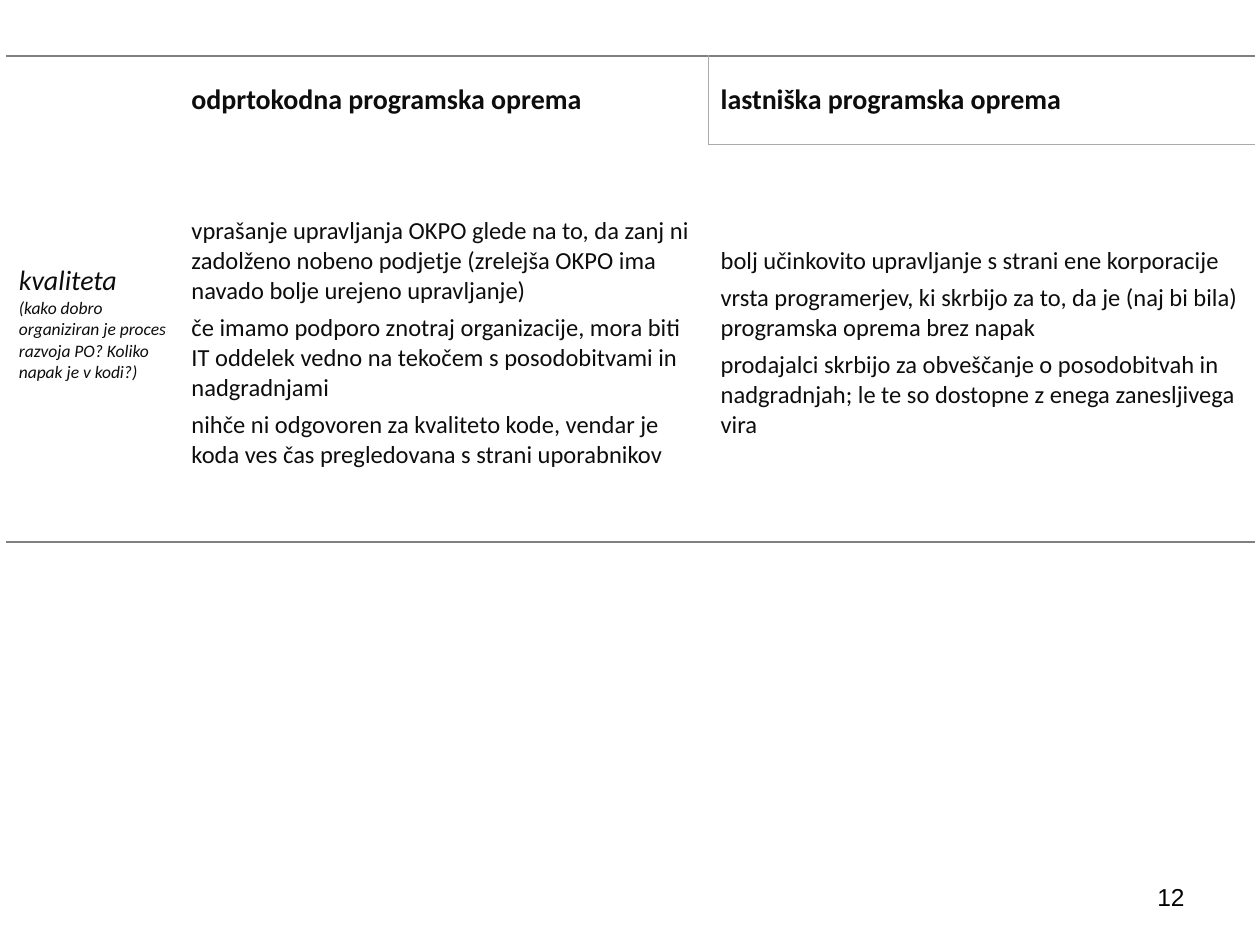
from lxml import etree
from pptx import Presentation
from pptx.dml.color import RGBColor
from pptx.enum.text import MSO_ANCHOR, PP_ALIGN
from pptx.oxml.ns import qn
from pptx.util import Inches, Pt

MIDDLE = MSO_ANCHOR.MIDDLE
RIGHT = PP_ALIGN.RIGHT
BLANK_LAYOUT = 6

COLORS = {"ink": "0D0D0D", "black": "000000", "rule": "808080", "hairline": "AAAAAA"}
RULE = ("rule", 1)
HAIRLINE = ("hairline", 0.25)

# Text formats: font values, colour name and space before
HEADING = {"font": {"name": "Calibri", "size": Pt(16), "bold": True}, "color": "ink", "before": 3.2}
TOPIC = {"font": {"name": "Calibri", "size": Pt(16), "italic": True}, "color": "ink", "before": 0}
DETAIL = {"font": {"name": "Calibri", "size": Pt(10), "italic": True}, "color": "ink", "before": 0}
POINT = {"font": {"name": "Calibri", "size": Pt(14)}, "color": "ink", "before": 4.2}
NUMBER = {"font": {"name": "Arial", "size": Pt(14)}, "color": "black", "before": 0}

OPEN_POINTS = [
    "vprašanje upravljanja OKPO glede na to, da zanj ni zadolženo nobeno podjetje "
    "(zrelejša OKPO ima navado bolje urejeno upravljanje)",
    "če imamo podporo znotraj organizacije, mora biti IT oddelek vedno na tekočem "
    "s posodobitvami in nadgradnjami",
    "nihče ni odgovoren za kvaliteto kode, vendar je koda ves čas pregledovana "
    "s strani uporabnikov",
]
OWNED_POINTS = [
    "bolj učinkovito upravljanje s strani ene korporacije",
    "vrsta programerjev, ki skrbijo za to, da je (naj bi bila) programska oprema brez napak",
    "prodajalci skrbijo za obveščanje o posodobitvah in nadgradnjah; "
    "le te so dostopne z enega zanesljivega vira",
]


class SlideBuilder:
    """Holds the deck, the current page and the shared styling."""

    def __init__(self, width, height):
        self.deck = Presentation()
        self.deck.slide_width = Inches(width)
        self.deck.slide_height = Inches(height)
        self.page = self.deck.slides.add_slide(self.deck.slide_layouts[BLANK_LAYOUT])

    def place(self, left, top, width, height):
        """Turn shares of the slide's size into lengths."""
        across, down = self.deck.slide_width, self.deck.slide_height
        return [int(share * size) for share, size in
                zip((left, top, width, height), (across, down, across, down))]

    def fill_text(self, frame, lines, align=None):
        for index, (text, style) in enumerate(lines):
            para = frame.paragraphs[0] if index == 0 else frame.add_paragraph()
            para.alignment = align
            para.space_before = Pt(style["before"])
            span = para.add_run()
            span.text = text
            for name, value in style["font"].items():
                setattr(span.font, name, value)
            span.font.color.rgb = RGBColor.from_string(COLORS[style["color"]])

    def border(self, cell, edges):
        """Draw the given edges (L, R, T, B) and clear the others."""
        properties = cell._tc.get_or_add_tcPr()
        for side in "LRTB":
            line = etree.SubElement(properties, qn(f"a:ln{side}"))
            if side in edges:
                color, weight = edges[side]
                line.set("w", str(Pt(weight)))
                fill = etree.SubElement(line, qn("a:solidFill"))
                etree.SubElement(fill, qn("a:srgbClr"), val=COLORS[color])
            else:
                etree.SubElement(line, qn("a:noFill"))

    def table(self, area, columns, rows, cells):
        table = self.page.shapes.add_table(len(rows), len(columns), *self.place(*area)).table
        table.first_row = table.horz_banding = False
        for column, width in zip(table.columns, columns):
            column.width = Inches(width)
        for row, height in zip(table.rows, rows):
            row.height = Inches(height)
        for row_index, row in enumerate(cells):
            for column_index, (lines, edges) in enumerate(row):
                cell = table.cell(row_index, column_index)
                cell.vertical_anchor = MIDDLE
                self.border(cell, edges)
                cell.fill.background()
                self.fill_text(cell.text_frame, lines)
        return table

    def text(self, area, lines, align):
        box = self.page.shapes.add_textbox(*self.place(*area))
        box.text_frame.word_wrap = True
        self.fill_text(box.text_frame, lines, align)


def main():
    builder = SlideBuilder(10, 7.5)

    # Comparison of open and proprietary software
    topic = [
        ("kvaliteta", TOPIC),
        ("(kako dobro organiziran je proces razvoja PO? Koliko napak je v kodi?)", DETAIL),
    ]
    cells = [
        [
            ([], {"T": RULE}),
            ([("odprtokodna programska oprema", HEADING)], {"T": RULE, "R": HAIRLINE}),
            ([("lastniška programska oprema", HEADING)],
             {"L": HAIRLINE, "T": RULE, "B": HAIRLINE}),
        ],
        [
            (topic, {"B": RULE}),
            ([(point, POINT) for point in OPEN_POINTS], {"B": RULE}),
            ([(point, POINT) for point in OWNED_POINTS], {"T": HAIRLINE, "B": RULE}),
        ],
    ]
    table = builder.table((0.005, 0.059, 0.99, 0.515), (1.37, 4.2, 4.34), (0.7, 3.16), cells)
    # The topic sits a little above the middle of its row
    table.cell(1, 0).margin_bottom = Inches(0.36)

    # Page number
    builder.text((0.717, 0.927, 0.233, 0.053), [("12", NUMBER)], RIGHT)

    builder.deck.save("out.pptx")


if __name__ == "__main__":
    main()
